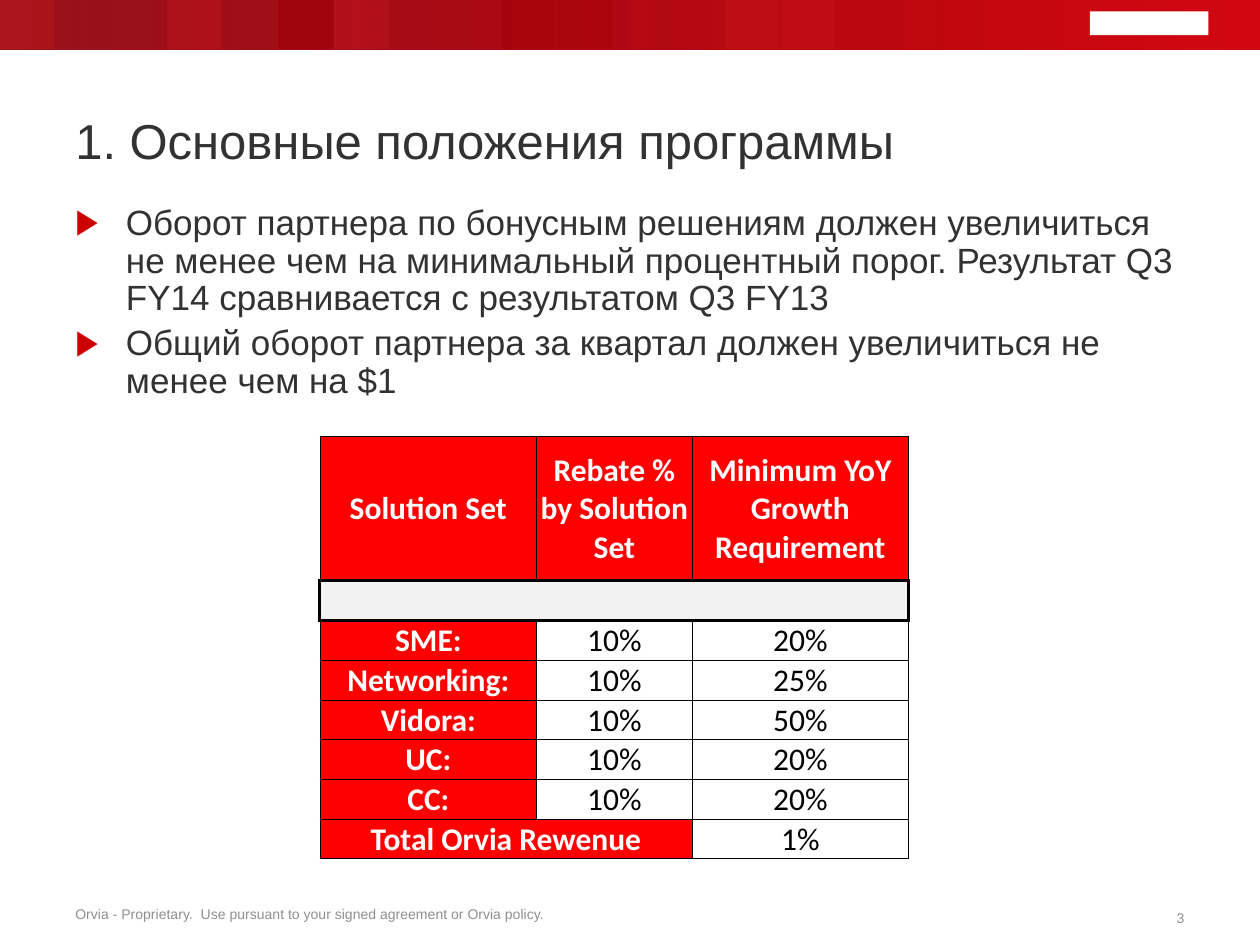
import pptx
import pptx.util
import pptx.oxml
import pptx.oxml.ns
import pptx.dml.color
import pptx.enum.shapes
import pptx.enum.text
import lxml.etree

Cm = pptx.util.Cm
Pt = pptx.util.Pt
RGBColor = pptx.dml.color.RGBColor
ANCHOR = pptx.enum.text.MSO_ANCHOR
ALIGN = pptx.enum.text.PP_ALIGN
qn = pptx.oxml.ns.qn

WHITE = RGBColor(0xFF, 0xFF, 0xFF)
BLACK = RGBColor(0x00, 0x00, 0x00)
DARK_RED = RGBColor(0x91, 0x05, 0x0F)
BRIGHT_RED = RGBColor(0xD1, 0x08, 0x11)
TILE_LIGHT = RGBColor(0xFF, 0x47, 0x47)
TILE_DARK = RGBColor(0x99, 0x00, 0x00)
TABLE_RED = RGBColor(0xFF, 0x00, 0x00)
SPACER_GRAY = RGBColor(0xF2, 0xF2, 0xF2)
TEXT_GRAY = RGBColor(0x32, 0x32, 0x32)
FOOTER_GRAY = RGBColor(0x8F, 0x8F, 0x8F)
BULLET_RED = RGBColor(0xCC, 0x00, 0x00)

presentation = pptx.Presentation()
presentation.slide_width = Cm(25.4)
presentation.slide_height = Cm(19.05)
slide = presentation.slides.add_slide(presentation.slide_layouts[6])


def add_block(left, top, width, height, color=None):
    shape = slide.shapes.add_shape(
        pptx.enum.shapes.MSO_SHAPE.RECTANGLE, Cm(left), Cm(top), Cm(width), Cm(height))
    shape.shadow.inherit = False
    shape.line.fill.background()
    if color is not None:
        shape.fill.solid()
        shape.fill.fore_color.rgb = color
        return
    shape.fill.gradient()
    shape.fill.gradient_angle = 0
    for stop, stop_color in zip(shape.fill.gradient_stops, (DARK_RED, BRIGHT_RED)):
        stop.color.rgb = stop_color
    first_color = shape._element.find(".//" + qn("a:srgbClr"))
    lxml.etree.SubElement(first_color, qn("a:alpha"), val="76000")


def add_text(left, top, width, height, lines, size, color, anchor, align=ALIGN.LEFT, wrap=True):
    box = slide.shapes.add_textbox(Cm(left), Cm(top), Cm(width), Cm(height))
    frame = box.text_frame
    frame.word_wrap = wrap
    frame.vertical_anchor = anchor
    frame.text = "\n".join(lines)
    for paragraph in frame.paragraphs:
        paragraph.alignment = align
        paragraph.line_spacing = 0.9
        font = paragraph.runs[0].font
        font.name = "Arial"
        font.size = Pt(size)
        font.color.rgb = color
    return frame


BANNER_TOP, BANNER_HEIGHT = -0.03, 1.02
TILE_PITCH = 1.124
add_block(0, BANNER_TOP, 25.4, BANNER_HEIGHT)
for color, columns in ((TILE_LIGHT, (0, 3, 6, 13, 14)), (TILE_DARK, (5, 9, 10))):
    for column in columns:
        add_block(column * TILE_PITCH, BANNER_TOP, 1.1, BANNER_HEIGHT, color)
add_block(0, BANNER_TOP, 25.4, BANNER_HEIGHT)
add_block(21.97, 0.23, 2.39, 0.48, WHITE)

add_text(1.27, 18.16, 10.34, 0.56,
         ["Orvia - Proprietary.  Use pursuant to your signed agreement or Orvia policy."],
         8, FOOTER_GRAY, ANCHOR.MIDDLE, wrap=False)
add_text(23.27, 18.24, 0.86, 0.56, ["3"], 8, FOOTER_GRAY, ANCHOR.MIDDLE, ALIGN.RIGHT, False)
add_text(1.27, 1.22, 22.86, 2.34, ["1. Основные положения программы"],
         28, TEXT_GRAY, ANCHOR.BOTTOM)

body = add_text(1.27, 4.01, 22.86, 13.13, [
    "Оборот партнера по бонусным решениям должен увеличиться не менее чем на "
    "минимальный процентный порог. Результат Q3 FY14 сравнивается с результатом Q3 FY13",
    "Общий оборот партнера за квартал должен увеличиться не менее чем на $1",
], 20, TEXT_GRAY, ANCHOR.TOP)
for paragraph in body.paragraphs:
    paragraph.space_before = Pt(4)
    properties = paragraph._p.get_or_add_pPr()
    properties.set("marL", str(Cm(1.02)))
    properties.set("indent", str(Cm(-1.02)))
    bullet_color = lxml.etree.SubElement(properties, qn("a:buClr"))
    lxml.etree.SubElement(bullet_color, qn("a:srgbClr"), val=str(BULLET_RED))
    lxml.etree.SubElement(properties, qn("a:buFont"), typeface="Arial")
    lxml.etree.SubElement(properties, qn("a:buChar"), char="▶")

rows = [
    ("Solution Set", "Rebate % by Solution Set", "Minimum YoY Growth Requirement"),
    ("", "", ""),
    ("SME:", "10%", "20%"),
    ("Networking:", "10%", "25%"),
    ("Vidora:", "10%", "50%"),
    ("UC:", "10%", "20%"),
    ("CC:", "10%", "20%"),
    ("Total Orvia Rewenue", "", "1%"),
]
HEADER_ROW, SPACER_ROW, TOTAL_ROW = 0, 1, len(rows) - 1
table = slide.shapes.add_table(len(rows), 3, Cm(6.45), Cm(8.79), Cm(11.87), Cm(8.52)).table
table.first_row = False
table.horz_banding = False
for column, width in zip(table.columns, (4.37, 3.13, 4.37)):
    column.width = Cm(width)
for row_index, row in enumerate(table.rows):
    row.height = Cm(2.92 if row_index == HEADER_ROW else 0.8)
table.cell(SPACER_ROW, 0).merge(table.cell(SPACER_ROW, 2))
table.cell(TOTAL_ROW, 0).merge(table.cell(TOTAL_ROW, 1))

for row_index, texts in enumerate(rows):
    for column_index, text in enumerate(texts):
        cell = table.cell(row_index, column_index)
        cell.margin_left = cell.margin_right = cell.margin_top = Cm(0.02)
        cell.margin_bottom = 0
        cell.vertical_anchor = ANCHOR.MIDDLE if row_index == HEADER_ROW else ANCHOR.BOTTOM

        thick_sides = {HEADER_ROW: ("lnB",), SPACER_ROW: ("lnL", "lnR", "lnT", "lnB"),
                       SPACER_ROW + 1: ("lnT",)}.get(row_index, ())
        for side in ("lnL", "lnR", "lnT", "lnB"):
            line = lxml.etree.SubElement(
                cell._tc.get_or_add_tcPr(), qn("a:" + side),
                w=str(Pt(2 if side in thick_sides else 0.5)))
            line_fill = lxml.etree.SubElement(line, qn("a:solidFill"))
            lxml.etree.SubElement(line_fill, qn("a:srgbClr"), val=str(BLACK))

        is_label = row_index == HEADER_ROW or column_index == 0
        if row_index == SPACER_ROW or is_label:
            cell.fill.solid()
            cell.fill.fore_color.rgb = SPACER_GRAY if row_index == SPACER_ROW else TABLE_RED
        else:
            cell.fill.background()

        if text:
            cell.text_frame.text = text
            paragraph = cell.text_frame.paragraphs[0]
            paragraph.alignment = ALIGN.CENTER
            font = paragraph.runs[0].font
            font.name = "Calibri"
            font.size = Pt(18)
            font.bold = is_label
            font.color.rgb = WHITE if is_label else BLACK

presentation.save("out.pptx")
